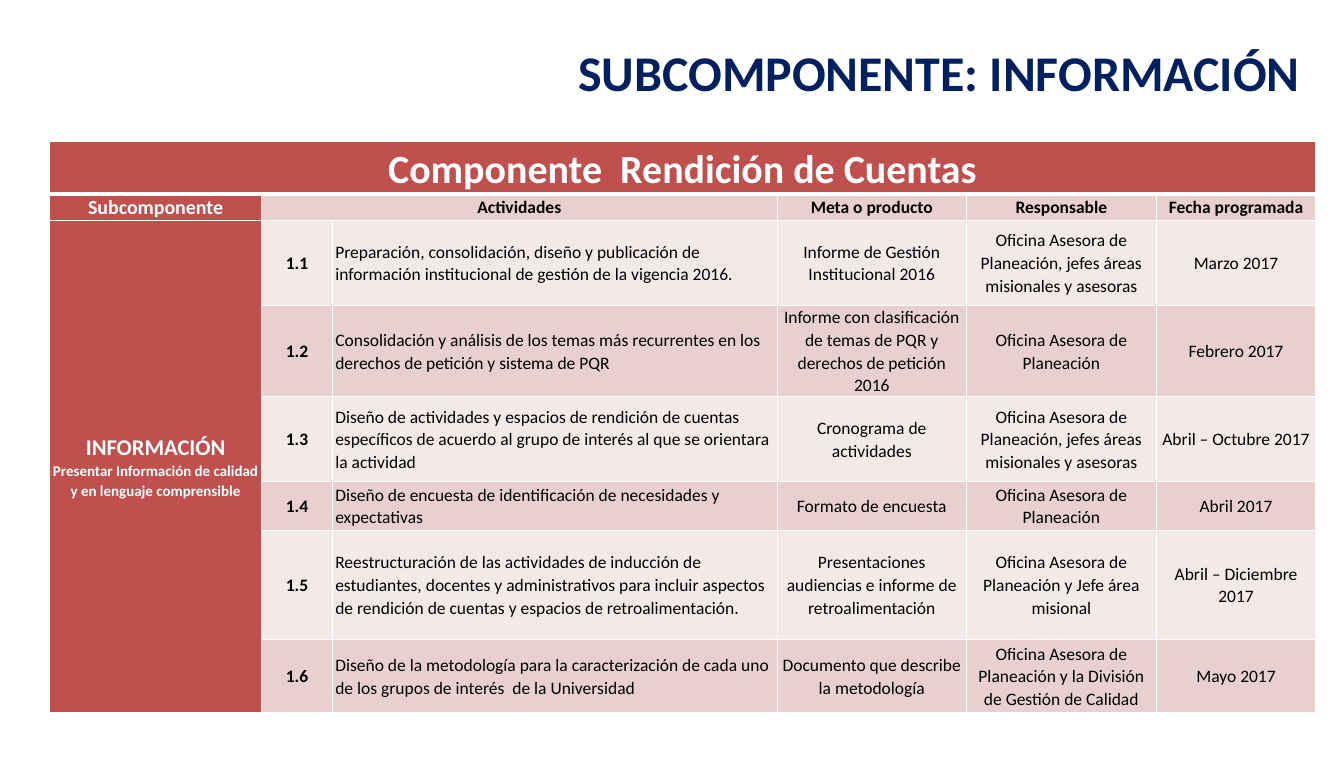
from dataclasses import dataclass

from lxml.etree import SubElement
from pptx import Presentation
from pptx.dml.color import RGBColor
from pptx.enum.text import MSO_ANCHOR as Anchor, MSO_AUTO_SIZE as AutoSize, PP_ALIGN as Align
from pptx.oxml.ns import qn
from pptx.util import Cm, Pt

TITLE = "SUBCOMPONENTE: INFORMACIÓN"
COMPONENT = "Componente  Rendición de Cuentas"
SUBCOMPONENT_HEADER = "Subcomponente"
SUBCOMPONENT = "INFORMACIÓN"
PURPOSE = "Presentar Información de calidad y en lenguaje comprensible"
HEADERS = {1: "Actividades", 3: "Meta o producto", 4: "Responsable", 5: "Fecha programada"}
ACTIVITIES = [
    ("1.1", "Preparación, consolidación, diseño y publicación de información institucional de gestión de la vigencia 2016.",
     "Informe de Gestión Institucional 2016",
     "Oficina Asesora de Planeación, jefes áreas misionales y asesoras", "Marzo 2017"),
    ("1.2", "Consolidación y análisis de los temas más recurrentes en los derechos de petición y sistema de PQR",
     "Informe con clasificación de temas de PQR y derechos de petición 2016",
     "Oficina Asesora de Planeación", "Febrero 2017"),
    ("1.3", "Diseño de actividades y espacios de rendición de cuentas específicos de acuerdo al grupo de interés al que se orientara la actividad",
     "Cronograma de actividades",
     "Oficina Asesora de Planeación, jefes áreas misionales y asesoras", "Abril – Octubre 2017"),
    ("1.4", "Diseño de encuesta de identificación de necesidades y expectativas",
     "Formato de encuesta", "Oficina Asesora de Planeación", "Abril 2017"),
    ("1.5", "Reestructuración de las actividades de inducción de estudiantes, docentes y administrativos para incluir aspectos de rendición de cuentas y espacios de retroalimentación.",
     "Presentaciones audiencias e informe de retroalimentación",
     "Oficina Asesora de Planeación y Jefe área misional", "Abril – Diciembre 2017"),
    ("1.6", "Diseño de la metodología para la caracterización de cada uno de los grupos de interés  de la Universidad",
     "Documento que describe la metodología",
     "Oficina Asesora de Planeación y la División de Gestión de Calidad", "Mayo 2017"),
]
COLUMN_WIDTHS = [6, 2, 12.57, 5.36, 5.36, 4.52]
ROW_HEIGHTS = [1.45, 0.69, 2.41, 2.57, 2.41, 1.37, 3.1, 2.06]
MERGES = [((0, 0), (0, 5)), ((1, 1), (1, 2)), ((2, 0), (7, 0))]


@dataclass(frozen=True)
class Theme:
    font: str = "Calibri"
    navy: str = "002060"
    red: str = "C0504D"
    dark_band: str = "E8D0D0"
    light_band: str = "F4E9E9"
    white: str = "FFFFFF"
    black: str = "000000"
    title: int = 40
    component: int = 32
    subcomponent: int = 18
    subheader: int = 16
    body: int = 14
    purpose: int = 12
    line_spacing: float = 1.07
    border: int = 1
    heavy_border: int = 3


THEME = Theme()


def set_attributes(target, values):
    for name, value in values.items():
        setattr(target, name, value)


def write(paragraph, text, size, color, bold=True, align=Align.CENTER):
    paragraph.text = text
    paragraph.alignment = align
    set_attributes(paragraph.font, {"name": THEME.font, "size": Pt(size), "bold": bold})
    paragraph.font.color.rgb = RGBColor.from_string(color)


def add_border(cell, side, width):
    properties = cell._tc.get_or_add_tcPr()
    line = SubElement(properties, qn(f"a:ln{side}"), w=str(Pt(width)))
    SubElement(SubElement(line, qn("a:solidFill")), qn("a:srgbClr"), val=THEME.white)


def fill_color(row, column):
    if row == 0 or column == 0:
        return THEME.red
    return THEME.light_band if row % 2 == 0 else THEME.dark_band


def format_cell(cell, row, column):
    set_attributes(cell, {
        "margin_left": Cm(0.08), "margin_right": Cm(0.08), "margin_top": 0,
        "margin_bottom": 0, "vertical_anchor": Anchor.MIDDLE,
    })
    heavy_sides = {0: "B", 1: "T"}
    for side in "LRTB":
        heavy = heavy_sides.get(row) == side
        add_border(cell, side, THEME.heavy_border if heavy else THEME.border)
    cell.fill.solid()
    cell.fill.fore_color.rgb = RGBColor.from_string(fill_color(row, column))
    for paragraph in cell.text_frame.paragraphs:
        paragraph.line_spacing = THEME.line_spacing


def add_title(slide, slide_width):
    title = slide.shapes.title
    left = Cm(10.39)
    set_attributes(title, {"left": left, "top": Cm(1.19), "width": slide_width - left, "height": Cm(1.7)})
    set_attributes(title.text_frame, {
        "margin_left": Cm(0.5), "margin_right": Cm(1.25), "margin_top": 0, "margin_bottom": 0,
        "word_wrap": True, "auto_size": AutoSize.NONE, "vertical_anchor": Anchor.TOP,
    })
    write(title.text_frame.paragraphs[0], TITLE, THEME.title, THEME.navy, align=Align.RIGHT)


def add_activity_table(slide):
    frame = slide.shapes.add_table(
        len(ROW_HEIGHTS), len(COLUMN_WIDTHS), Cm(1.4), Cm(4.01),
        Cm(sum(COLUMN_WIDTHS)), Cm(sum(ROW_HEIGHTS)))
    table = frame.table
    set_attributes(table, {"first_row": False, "horz_banding": False})
    for column, width in zip(table.columns, COLUMN_WIDTHS):
        column.width = Cm(width)
    for row, height in zip(table.rows, ROW_HEIGHTS):
        row.height = Cm(height)
    for start, end in MERGES:
        table.cell(*start).merge(table.cell(*end))

    def first_paragraph(row, column):
        return table.cell(row, column).text_frame.paragraphs[0]

    write(first_paragraph(0, 0), COMPONENT, THEME.component, THEME.white)
    write(first_paragraph(1, 0), SUBCOMPONENT_HEADER, THEME.subheader, THEME.white)
    write(first_paragraph(2, 0), SUBCOMPONENT, THEME.subcomponent, THEME.white)
    write(table.cell(2, 0).text_frame.add_paragraph(), PURPOSE, THEME.purpose, THEME.white)
    for column, header in HEADERS.items():
        write(first_paragraph(1, column), header, THEME.body, THEME.black)
    for row, activity in enumerate(ACTIVITIES, start=2):
        for column, text in enumerate(activity, start=1):
            align = Align.LEFT if column == 2 else Align.CENTER
            write(first_paragraph(row, column), text, THEME.body, THEME.black, column == 1, align)
    for row in range(len(ROW_HEIGHTS)):
        for column in range(len(COLUMN_WIDTHS)):
            format_cell(table.cell(row, column), row, column)


def main():
    presentation = Presentation()
    set_attributes(presentation, {"slide_width": Cm(38), "slide_height": Cm(22)})
    slide = presentation.slides.add_slide(presentation.slide_layouts.get_by_name("Title Only"))
    add_activity_table(slide)
    add_title(slide, presentation.slide_width)
    presentation.save("out.pptx")


if __name__ == "__main__":
    main()
